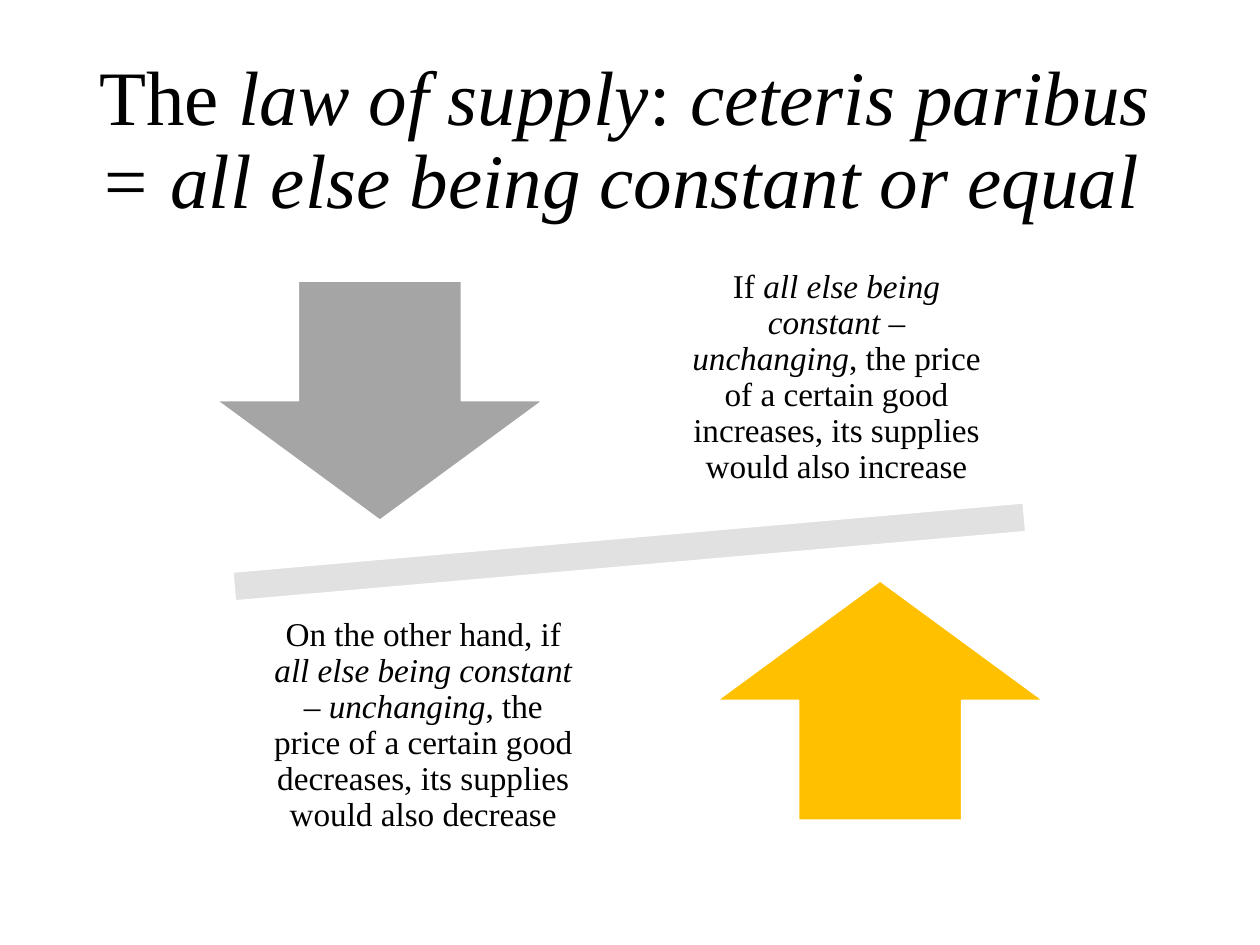
from pptx import Presentation
from pptx.dml.color import RGBColor
from pptx.enum.shapes import MSO_SHAPE
from pptx.enum.text import MSO_ANCHOR, PP_ALIGN
from pptx.util import Inches, Pt

MINUS = MSO_SHAPE.MATH_MINUS
DOWN_ARROW = MSO_SHAPE.DOWN_ARROW
UP_ARROW = MSO_SHAPE.UP_ARROW
MIDDLE = MSO_ANCHOR.MIDDLE
LEFT = PP_ALIGN.LEFT
CENTER = PP_ALIGN.CENTER


def color(value):
    return RGBColor.from_string(value)


presentation = Presentation()
presentation.slide_width = Inches(10)
presentation.slide_height = Inches(7.5)
slide = presentation.slides.add_slide(presentation.slide_layouts[6])

balance_shapes = [
    (MINUS, 0.71, 3.89, 8.57, 0.98, 355, "E1E1E1"),
    (DOWN_ARROW, 1.72, 2.23, 2.59, 1.9, 0, "A5A5A5"),
    (UP_ARROW, 5.69, 4.61, 2.59, 1.9, 0, "FFC000"),
]
for kind, left, top, width, height, rotation, fill in balance_shapes:
    shape = slide.shapes.add_shape(kind, Inches(left), Inches(top), Inches(width), Inches(height))
    shape.rotation = rotation
    shape.shadow.inherit = False
    shape.fill.solid()
    shape.fill.fore_color.rgb = color(fill)
    shape.line.color.rgb = color("FFFFFF")
    shape.line.width = Pt(1)

condition = "all else being constant – unchanging"
texts = [
    (0.69, 0.4, 8.62, 1.45, 0.1, 0.05, 44, LEFT, [
        ("The ", False),
        ("law of supply", True),
        (": ", False),
        ("ceteris paribus = all else being constant or equal", True),
    ]),
    (5.26, 2, 2.76, 2, 0.15, 0.15, 19, CENTER, [
        ("If ", False),
        (condition, True),
        (", the price of a certain good increases, its supplies would also increase", False),
    ]),
    (1.98, 4.76, 2.76, 2, 0.15, 0.15, 19, CENTER, [
        ("On the other hand, if ", False),
        (condition, True),
        (", the price of a certain good decreases, its supplies would also decrease", False),
    ]),
]
for left, top, width, height, side_inset, end_inset, size, alignment, pieces in texts:
    text_box = slide.shapes.add_textbox(Inches(left), Inches(top), Inches(width), Inches(height))
    text_frame = text_box.text_frame
    text_frame.word_wrap = True
    text_frame.vertical_anchor = MIDDLE
    text_frame.margin_left = text_frame.margin_right = Inches(side_inset)
    text_frame.margin_top = text_frame.margin_bottom = Inches(end_inset)
    paragraph = text_frame.paragraphs[0]
    paragraph.alignment = alignment
    paragraph.line_spacing = 0.9
    for wording, italic in pieces:
        run = paragraph.add_run()
        run.text = wording
        run.font.name = "Times New Roman"
        run.font.size = Pt(size)
        run.font.italic = italic
        run.font.color.rgb = color("000000")

presentation.save("out.pptx")
